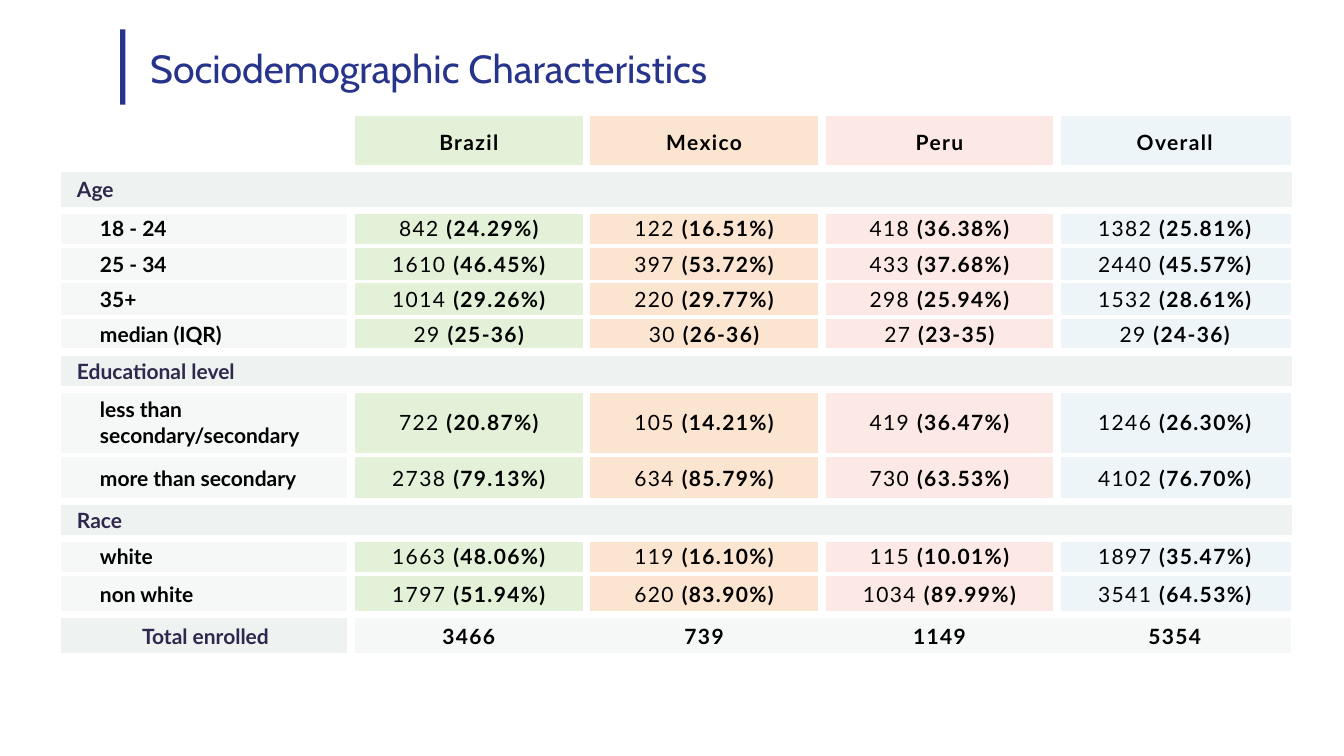
"""Build the sociodemographic characteristics slide."""
from lxml import etree
from pptx import Presentation
from pptx.dml.color import RGBColor
from pptx.enum.shapes import MSO_SHAPE
from pptx.enum.text import MSO_ANCHOR, PP_ALIGN
from pptx.oxml.ns import qn
from pptx.util import Cm, Pt

RECTANGLE = MSO_SHAPE.RECTANGLE
MIDDLE = MSO_ANCHOR.MIDDLE
LEFT, CENTER = PP_ALIGN.LEFT, PP_ALIGN.CENTER

COLORS = {
    "navy": "27348B", "heading": "2F284E", "black": "000000", "gap": "FFFFFF",
    "section": "EEF2F1", "label": "F6F8F7", "Brazil": "E2F1D7",
    "Mexico": "FCE5D0", "Peru": "FCE8E4", "Overall": "EEF5F8",
}
COUNTRIES = ["Brazil", "Mexico", "Peru", "Overall"]
ROWS = [
    ("header", 1.32, "", COUNTRIES),
    ("section", 1.07, "Age", []),
    ("data", 0.89, "18 - 24", ["842 (24.29%)", "122 (16.51%)", "418 (36.38%)", "1382 (25.81%)"]),
    ("data", 0.89, "25 - 34", ["1610 (46.45%)", "397 (53.72%)", "433 (37.68%)", "2440 (45.57%)"]),
    ("data", 0.89, "35+", ["1014 (29.26%)", "220 (29.77%)", "298 (25.94%)", "1532 (28.61%)"]),
    ("data", 0.89, "median (IQR)", ["29 (25-36)", "30 (26-36)", "27 (23-35)", "29 (24-36)"]),
    ("section", 0.94, "Educational level", []),
    ("data", 1.65, "less than secondary/secondary",
     ["722 (20.87%)", "105 (14.21%)", "419 (36.47%)", "1246 (26.30%)"]),
    ("data", 1.17, "more than secondary",
     ["2738 (79.13%)", "634 (85.79%)", "730 (63.53%)", "4102 (76.70%)"]),
    ("section", 0.94, "Race", []),
    ("data", 0.89, "white", ["1663 (48.06%)", "119 (16.10%)", "115 (10.01%)", "1897 (35.47%)"]),
    ("data", 1.02, "non white", ["1797 (51.94%)", "620 (83.90%)", "1034 (89.99%)", "3541 (64.53%)"]),
    ("total", 1.07, "Total enrolled", ["3466", "739", "1149", "5354"]),
]
LABEL_INDENT = {"header": 0, "section": 0.41, "data": 0.99, "total": 0}


def set_borders(cell, widths):
    """Give the left, right, top and bottom edges white lines, or none for width 0."""
    properties = cell._tc.get_or_add_tcPr()
    for position, (side, width) in enumerate(zip("LRTB", widths)):
        line = etree.Element(qn(f"a:ln{side}"), w=str(Pt(width)))
        if width:
            fill = etree.SubElement(line, qn("a:solidFill"))
            etree.SubElement(fill, qn("a:srgbClr"), val=COLORS["gap"])
        else:
            etree.SubElement(line, qn("a:noFill"))
        properties.insert(position, line)


def write_cell(cell, parts, color, align, indent, spacing):
    """Write (text, bold) parts into a cell as one paragraph."""
    cell.vertical_anchor = MIDDLE
    cell.margin_left = Cm(indent)
    cell.margin_right = cell.margin_top = Cm(0.02)
    cell.margin_bottom = 0
    paragraph = cell.text_frame.paragraphs[0]
    paragraph.alignment = align
    paragraph.font.name = "Lato"
    paragraph.font.size = Pt(15)
    paragraph.font.color.rgb = RGBColor.from_string(COLORS[color])
    for text, bold in parts:
        run = paragraph.add_run()
        run.text = text
        run.font.bold = bold
        run._r.get_or_add_rPr().set("spc", str(spacing))


prs = Presentation()
prs.slide_width, prs.slide_height = Cm(33.87), Cm(19.05)
slide = prs.slides.add_slide(prs.slide_layouts[5])

accent_bar = slide.shapes.add_shape(RECTANGLE, Cm(3.03), Cm(0.74), Cm(0.13), Cm(1.9))
accent_bar.shadow.inherit = False
accent_bar.fill.solid()
accent_bar.fill.fore_color.rgb = RGBColor.from_string(COLORS["navy"])
accent_bar.line.fill.background()

title = slide.shapes.title
title.left, title.top, title.width, title.height = Cm(3.53), Cm(0.89), Cm(26.37), Cm(1.65)
title.text_frame.text = "Sociodemographic Characteristics"
title.text_frame.vertical_anchor = MIDDLE
heading = title.text_frame.paragraphs[0]
heading.alignment = LEFT
heading.font.name = "Cabin"
heading.font.size = Pt(28)
heading.font.color.rgb = RGBColor.from_string(COLORS["navy"])

column_widths = [7.32] + [5.93] * len(COUNTRIES)
table = slide.shapes.add_table(
    len(ROWS), len(column_widths), Cm(1.53), Cm(2.92),
    Cm(sum(column_widths)), Cm(sum(row[1] for row in ROWS))).table
table.first_row = table.horz_banding = False
for column, width in zip(table.columns, column_widths):
    column.width = Cm(width)

kinds = [row[0] for row in ROWS]
last_column = len(COUNTRIES)
for r, (kind, height, label, values) in enumerate(ROWS):
    table.rows[r].height = Cm(height)
    above = 0 if r == 0 else 3 if kinds[r - 1:r + 1] == ["data", "data"] else 6
    below = 3 if kinds[r:r + 2] == ["data", "data"] else 6

    for c in range(last_column + 1):
        cell = table.cell(r, c)
        if kind == "header" and c == 0:
            cell.fill.background()
        else:
            if kind == "section" or (kind == "total" and c == 0):
                fill_name = "section"
            elif kind == "total" or c == 0:
                fill_name = "label"
            else:
                fill_name = COUNTRIES[c - 1]
            cell.fill.solid()
            cell.fill.fore_color.rgb = RGBColor.from_string(COLORS[fill_name])
        joined = {"section": 0, "total": 1}.get(kind, last_column + 1)
        left = 6 if 0 < c <= joined else 0
        right = 2.25 if c == last_column else 6 if c < joined else 0
        set_borders(cell, (left, right, above, below))

    if kind == "section":
        table.cell(r, 0).merge(table.cell(r, last_column))
    if label:
        write_cell(table.cell(r, 0), [(label, True)],
                   "black" if kind == "data" else "heading",
                   CENTER if kind == "total" else LEFT, LABEL_INDENT[kind], 0)
    for c, value in enumerate(values, start=1):
        count, bracket, rest = value.partition("(")
        parts = [(count, False), (bracket + rest, True)] if bracket else [(value, True)]
        write_cell(table.cell(r, c), parts, "black", CENTER, 0.02, 100)

prs.save("out.pptx")
